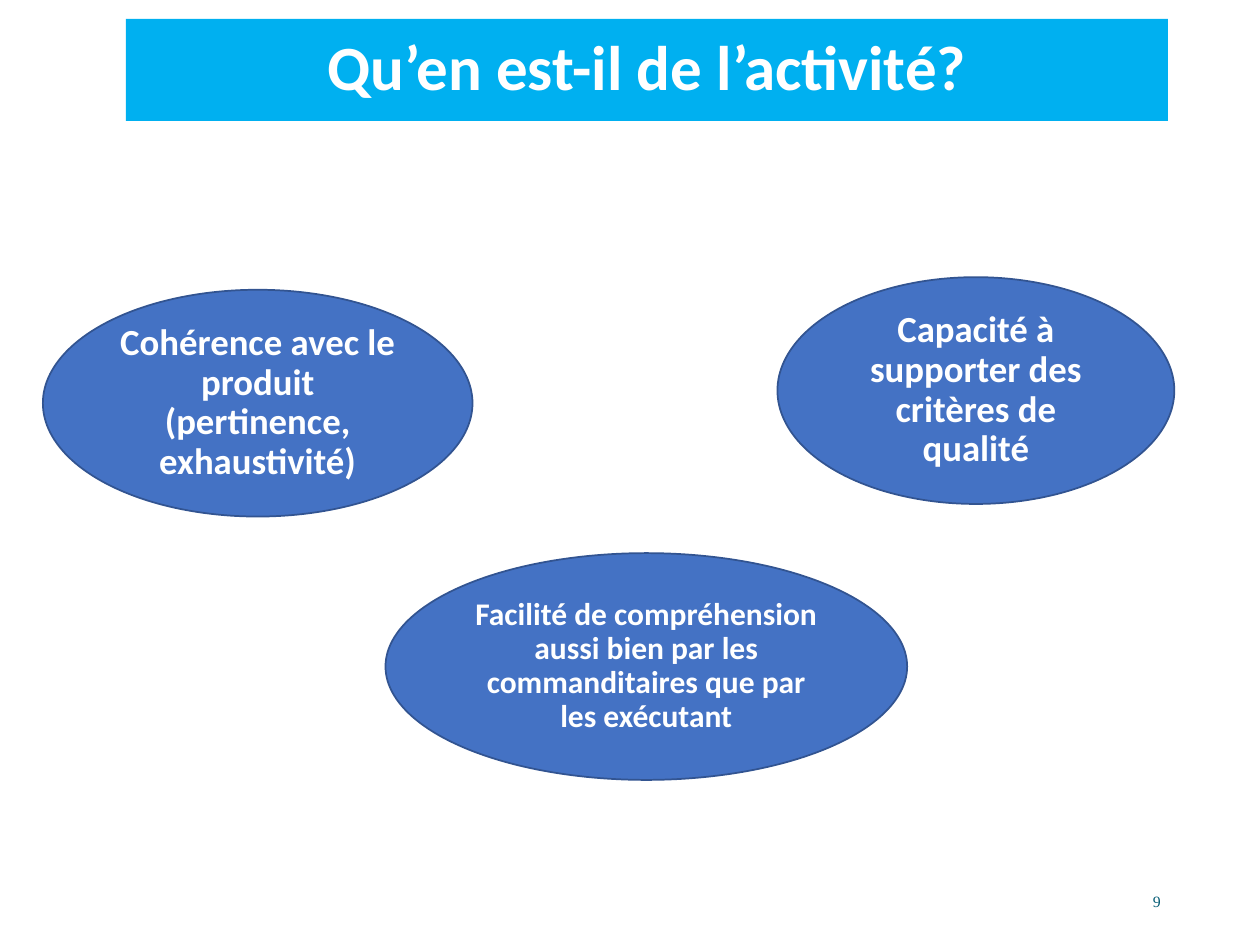
import dataclasses
import pptx
import pptx.dml.color
import pptx.enum.shapes
import pptx.enum.text
import pptx.util

Inches = pptx.util.Inches
RGB = pptx.dml.color.RGBColor.from_string
Kind = pptx.enum.shapes.MSO_SHAPE
Align = pptx.enum.text.PP_ALIGN


@dataclasses.dataclass(frozen=True)
class Theme:
    band: str = "00B0F0"
    oval: str = "4472C4"
    edge: str = "325491"
    light: str = "FFFFFF"
    page: str = "045C75"
    font: str = "Calibri"
    serif: str = "Times New Roman"
    head: int = 36
    large: int = 21
    body: int = 18
    small: int = 9


THEME = Theme()


def set_text(shape, text, size, font, color, align, bold=False, space=None):
    frame = shape.text_frame
    frame.word_wrap = True
    frame.vertical_anchor = pptx.enum.text.MSO_ANCHOR.MIDDLE
    frame.text = text
    para = frame.paragraphs[0]
    para.alignment = align
    para.line_spacing = space
    style = para.runs[0].font
    style.size = pptx.util.Pt(size)
    style.name = font
    style.bold = bold
    style.color.rgb = RGB(color)


def add_block(slide, kind, box, fill, text, size):
    """Add a filled shape with bold, light, centred text."""
    shape = slide.shapes.add_shape(kind, *map(Inches, box))
    shape.shadow.inherit = False
    shape.fill.solid()
    shape.fill.fore_color.rgb = RGB(fill)
    set_text(shape, text, size, THEME.font, THEME.light, Align.CENTER,
             bold=True, space=0.9)
    return shape


def add_title(slide, box, text):
    band = add_block(slide, Kind.RECTANGLE, box, THEME.band, text, THEME.head)
    band.line.fill.background()


def add_oval(slide, box, text, size):
    oval = add_block(slide, Kind.OVAL, box, THEME.oval, text, size)
    oval.line.color.rgb = RGB(THEME.edge)
    oval.line.width = pptx.util.Pt(1)


def add_page(slide, box, text):
    label = slide.shapes.add_textbox(*map(Inches, box))
    set_text(label, text, THEME.small, THEME.serif, THEME.page, Align.RIGHT)


def main():
    deck = pptx.Presentation()
    deck.slide_width, deck.slide_height = Inches(10), Inches(7.5)
    slide = deck.slides.add_slide(deck.slide_layouts[6])

    add_page(slide, (7.06, 6.95, 2.25, 0.4), "9")
    add_title(slide, (1, 0.15, 8.27, 0.81), "Qu’en est-il de l’activité?")

    tall = 1.8
    ovals = [
        (0.34, 2.3, 3.41, THEME.large,
         "Cohérence avec le produit (pertinence, exhaustivité)"),
        (6.17, 2.2, 3.15, THEME.large,
         "Capacité à supporter des critères de qualité"),
        (3.06, 4.39, 4.14, THEME.body,
         "Facilité de compréhension aussi bien par les commanditaires "
         "que par les exécutant"),
    ]
    for left, top, wide, size, text in ovals:
        add_oval(slide, (left, top, wide, tall), text, size)

    deck.save("out.pptx")


if __name__ == "__main__":
    main()
